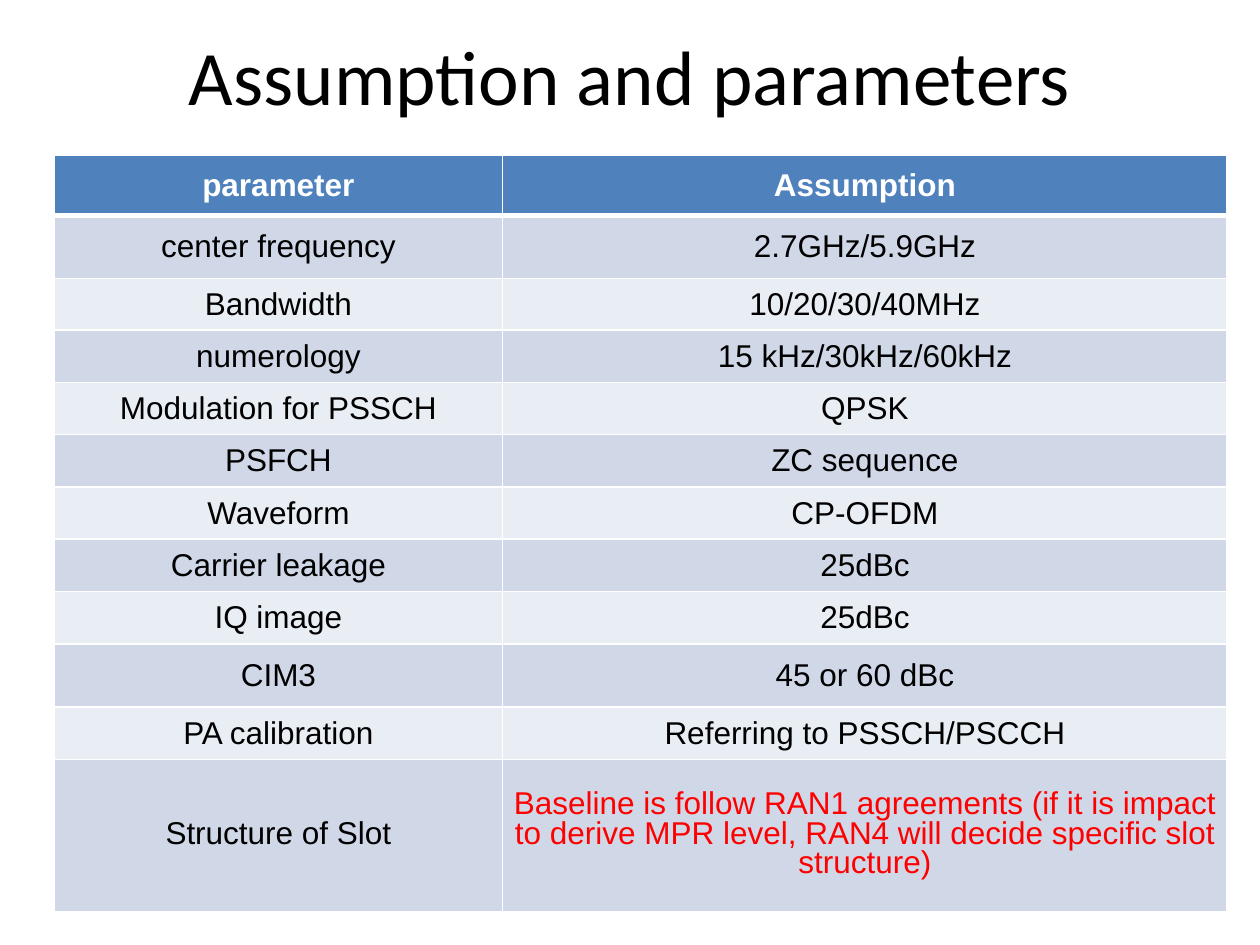
"""Build a slide with a title and a two-column table of assumptions."""
from lxml import etree
from pptx import Presentation
from pptx.dml.color import RGBColor
from pptx.enum.text import MSO_ANCHOR, PP_ALIGN
from pptx.oxml.ns import qn
from pptx.util import Inches, Pt

MIDDLE = MSO_ANCHOR.MIDDLE
CENTER = PP_ALIGN.CENTER
TITLE_ONLY = 5
WIDE, HIGH = 10, 7.5
COLS, ROWS = 100, 75
COLORS = {"head": "4F81BD", "odd": "D0D8E8", "even": "E9EDF4",
          "white": "FFFFFF", "black": "000000", "red": "FF0000"}
HEADER = ("parameter", "Assumption")
PARAMS = [
    ("center frequency", "2.7GHz/5.9GHz", 5),
    ("Bandwidth", "10/20/30/40MHz", 4.1),
    ("numerology", "15 kHz/30kHz/60kHz", 4.15),
    ("Modulation for PSSCH", "QPSK", 4.15),
    ("PSFCH", "ZC sequence", 4.15),
    ("Waveform", "CP-OFDM", 4.15),
    ("Carrier leakage", "25dBc", 4.15),
    ("IQ image", "25dBc", 4.15),
    ("CIM3", "45 or 60 dBc", 5),
    ("PA calibration", "Referring to PSSCH/PSCCH", 4.2),
    ("Structure of Slot",
     "Baseline is follow RAN1 agreements (if it is impact to derive MPR level, "
     "RAN4 will decide specific slot structure)", 12.1),
]


class Deck:
    """Hold the style and the current slide."""

    def __init__(self):
        self.prs = Presentation()
        self.prs.slide_width, self.prs.slide_height = Inches(WIDE), Inches(HIGH)
        self.slide = self.prs.slides.add_slide(self.prs.slide_layouts[TITLE_ONLY])

    def across(self, cols):
        """Turn grid columns into a length."""
        return Inches(cols * WIDE / COLS)

    def down(self, rows):
        """Turn grid rows into a length."""
        return Inches(rows * HIGH / ROWS)

    def label(self, para, text, size, face, color, bold=False):
        """Fill and style one centred paragraph."""
        para.text = text
        para.alignment = CENTER
        font = para.font
        font.size, font.name, font.bold = Pt(size), face, bold
        font.color.rgb = RGBColor.from_string(COLORS[color])

    def title(self, text, left, top, width, height):
        """Move and fill the title placeholder."""
        shape = self.slide.shapes.title
        shape.left, shape.top = self.across(left), self.down(top)
        shape.width, shape.height = self.across(width), self.down(height)
        frame = shape.text_frame
        frame.vertical_anchor = MIDDLE
        self.label(frame.paragraphs[0], text, 44, "Calibri", "black")

    def border(self, cell, top, bottom):
        """Draw white lines around a cell."""
        props = cell._tc.get_or_add_tcPr()
        for side, points in zip("LRTB", (1, 1, top, bottom)):
            line = etree.SubElement(props, qn(f"a:ln{side}"), w=str(Pt(points)))
            fill = etree.SubElement(line, qn("a:solidFill"))
            etree.SubElement(fill, qn("a:srgbClr"), val=COLORS["white"])

    def cell(self, cell, text, fill, color, bold=False, top=1, bottom=1):
        """Style and fill one table cell."""
        self.border(cell, top, bottom)
        cell.fill.solid()
        cell.fill.fore_color.rgb = RGBColor.from_string(COLORS[fill])
        cell.vertical_anchor = MIDDLE
        cell.margin_left = cell.margin_right = Inches(0.07)
        cell.margin_top = cell.margin_bottom = 0
        self.label(cell.text_frame.paragraphs[0], text, 18, "Arial", color, bold)

    def table(self, left, top, widths, head, params):
        """Add a banded table with a header row."""
        heights = [head] + [row[-1] for row in params]
        table = self.slide.shapes.add_table(
            len(heights), len(widths), self.across(left), self.down(top),
            self.across(sum(widths)), self.down(sum(heights))).table
        for col, width in zip(table.columns, widths):
            col.width = self.across(width)
        for row, height in zip(table.rows, heights):
            row.height = self.down(height)
        for col, text in enumerate(HEADER):
            self.cell(table.cell(0, col), text, "head", "white", True, bottom=3)
        for num, (*texts, _) in enumerate(params, 1):
            for col, text in enumerate(texts):
                self.cell(table.cell(num, col), text, "odd" if num % 2 else "even",
                          "black", top=3 if num == 1 else 1)
        return table


def main():
    """Build and save the slide."""
    deck = Deck()
    deck.title("Assumption and parameters", 5, -0.3, 90, 12.5)
    table = deck.table(4.3, 12.3, (35.6, 57.5), 4.8, PARAMS)
    last = len(PARAMS)
    for col in range(len(HEADER)):
        table.cell(last, col).text_frame.paragraphs[0].line_spacing = Pt(17)
    note = table.cell(last, 1).text_frame.paragraphs[0]
    note.font.color.rgb = RGBColor.from_string(COLORS["red"])
    deck.prs.save("out.pptx")


if __name__ == "__main__":
    main()
